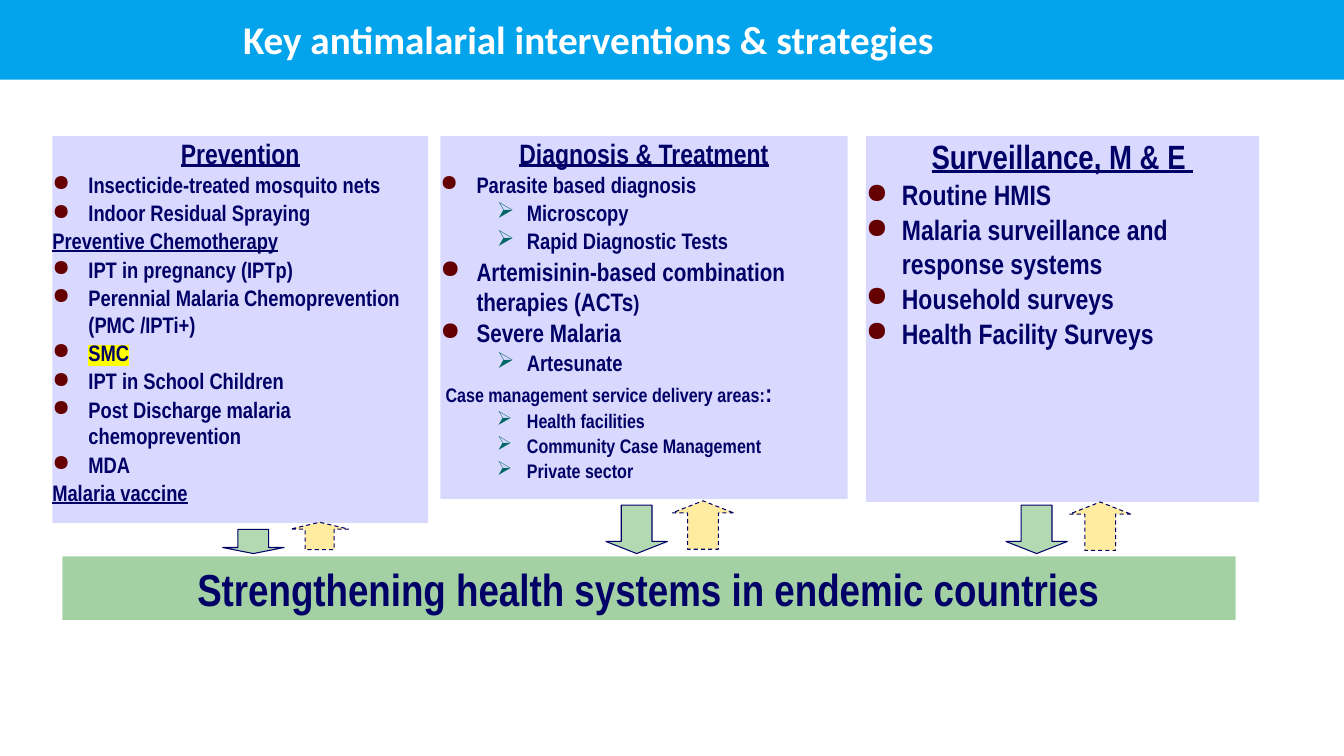
from pptx import Presentation
from pptx.dml.color import RGBColor
from pptx.enum.dml import MSO_LINE_DASH_STYLE as DASH
from pptx.enum.shapes import MSO_SHAPE as SHAPE
from pptx.enum.text import MSO_ANCHOR as ANCHOR, PP_ALIGN as ALIGN
from pptx.oxml.ns import qn
from pptx.util import Cm, Pt
from lxml.etree import SubElement, Element

NAVY = RGBColor(0x00, 0x00, 0x66)
WHITE = RGBColor(0xFF, 0xFF, 0xFF)
SKY = RGBColor(0x04, 0xA4, 0xEC)
LILAC = RGBColor(0x99, 0x99, 0xFF)
GREEN = RGBColor(0x33, 0x99, 0x33)
AMBER = RGBColor(0xFF, 0xCC, 0x00)
MAROON = RGBColor(0x64, 0x00, 0x00)
TEAL = RGBColor(0x00, 0x66, 0x66)
YELLOW = RGBColor(0xFF, 0xFF, 0x00)

# Paragraph kinds
HEAD, ITEM, SUB, SUBHEAD, NOTE, MARKED = range(6)
# kind: (level, left margin in cm, hanging indent in cm, bullet, bullet colour)
BULLETS = {
    ITEM: (0, 0.91, 0.91, "●", MAROON),
    MARKED: (0, 0.91, 0.91, "●", MAROON),
    SUB: (1, 2.18, 0.76, "➢", TEAL),
}

# Each paragraph: kind, then (text, size) runs
PREVENTION = [
    (HEAD, ("Prevention", 20)),
    (ITEM, ("Insecticide-treated mosquito nets", 16)),
    (ITEM, ("Indoor Residual Spraying", 16)),
    (SUBHEAD, ("Preventive Chemotherapy", 16)),
    (ITEM, ("IPT in pregnancy (IPTp)", 16)),
    (ITEM, ("Perennial Malaria Chemoprevention (PMC /IPTi+)", 16)),
    (MARKED, ("SMC", 16)),
    (ITEM, ("IPT in School Children", 16)),
    (ITEM, ("Post Discharge malaria chemoprevention", 16)),
    (ITEM, ("MDA", 16)),
    (SUBHEAD, ("Malaria vaccine", 16)),
]
DIAGNOSIS = [
    (HEAD, ("Diagnosis & Treatment", 20)),
    (ITEM, ("Parasite based diagnosis", 16)),
    (SUB, ("Microscopy", 16)),
    (SUB, ("Rapid Diagnostic Tests", 16)),
    (ITEM, ("Artemisinin-based combination therapies (ACTs", 18), (")", 16)),
    (ITEM, ("Severe Malaria", 18)),
    (SUB, ("Artesunate", 16)),
    (NOTE, (" ", 16), ("Case management service delivery areas:", 14), (":", 18)),
    (SUB, ("Health facilities", 14)),
    (SUB, ("Community Case Management", 14)),
    (SUB, ("Private sector", 14)),
]
SURVEILLANCE = [
    (HEAD, ("Surveillance, M & E ", 24)),
    (ITEM, ("Routine HMIS", 20)),
    (ITEM, ("Malaria surveillance and response systems", 20)),
    (ITEM, ("Household surveys", 20)),
    (ITEM, ("Health Facility Surveys", 20)),
]


class SlideBuilder:
    title_font = "Calibri"
    body_font = "Arial Narrow"

    def __init__(self, slide):
        self.s = slide

    def shape(self, kind, box, color, alpha=100):
        sp = self.s.shapes.add_shape(kind, *map(Cm, box))
        sp.shadow.inherit = False
        sp.fill.solid()
        sp.fill.fore_color.rgb = color
        sp.line.fill.background()
        if alpha < 100:
            clr = sp.element.spPr.find(qn("a:solidFill"))[0]
            SubElement(clr, qn("a:alpha"), val=str(alpha * 1000))
        return sp

    def run(self, p, text, size, color=NAVY, font=None, underline=False):
        r = p.add_run()
        r.text = text
        f = r.font
        f.name, f.size, f.bold = font or self.body_font, Pt(size), True
        f.underline = underline
        f.color.rgb = color
        return r

    def bullet(self, p, level, margin, hanging, char, color):
        p.level = level
        pPr = p._p.get_or_add_pPr()
        pPr.set("marL", str(Cm(margin)))
        pPr.set("indent", str(-Cm(hanging)))
        SubElement(SubElement(pPr, qn("a:buClr")), qn("a:srgbClr"), val=str(color))
        SubElement(pPr, qn("a:buChar"), char=char)

    def highlight(self, r, color):
        mark = Element(qn("a:highlight"))
        SubElement(mark, qn("a:srgbClr"), val=str(color))
        r._r.rPr.find(qn("a:solidFill")).addnext(mark)

    def title(self, text, box):
        sp = self.s.shapes.title
        sp.left, sp.top, sp.width, sp.height = map(Cm, box)
        tf = sp.text_frame
        tf.vertical_anchor = ANCHOR.TOP
        tf.word_wrap = True
        p = tf.paragraphs[0]
        p.alignment = ALIGN.LEFT
        self.run(p, text, 28, WHITE, self.title_font)

    def banner(self, box):
        sp = self.shape(SHAPE.RECTANGLE, box, SKY)
        self.s.shapes.title.element.addprevious(sp.element)

    def panel(self, box, paragraphs):
        tf = self.shape(SHAPE.RECTANGLE, box, LILAC, 37).text_frame
        tf.margin_left = tf.margin_right = tf.margin_top = tf.margin_bottom = 0
        tf.vertical_anchor = ANCHOR.TOP
        tf.word_wrap = True
        for i, (kind, *runs) in enumerate(paragraphs):
            p = tf.add_paragraph() if i else tf.paragraphs[0]
            p.alignment = ALIGN.CENTER if kind == HEAD else ALIGN.LEFT
            if kind in BULLETS:
                self.bullet(p, *BULLETS[kind])
            if i:
                p.space_before = Pt(1)
            for text, size in runs:
                r = self.run(p, text, size, underline=kind in (HEAD, SUBHEAD))
                if kind == MARKED:
                    self.highlight(r, YELLOW)

    def foundation(self, box, text):
        tf = self.shape(SHAPE.RECTANGLE, box, GREEN, 45).text_frame
        tf.vertical_anchor = ANCHOR.TOP
        tf.word_wrap = True
        p = tf.paragraphs[0]
        p.alignment = ALIGN.CENTER
        self.run(p, text, 32)

    def arrow(self, box, up=False):
        sp = self.shape(SHAPE.DOWN_ARROW, box, AMBER if up else GREEN, 37)
        sp.adjustments[0], sp.adjustments[1] = 0.5, 0.25
        sp.line.color.rgb = NAVY
        sp.line.width = Pt(0.75)
        if up:
            sp.rotation = 180
            sp.line.dash_style = DASH.DASH


def main():
    prs = Presentation()
    prs.slide_width, prs.slide_height = Cm(33.87), Cm(19.05)
    b = SlideBuilder(prs.slides.add_slide(prs.slide_layouts[5]))

    # Title on its banner
    b.banner((0, 0, 33.87, 2.01))
    b.title("Key antimalarial interventions & strategies", (5.87, 0.25, 21.97, 0.94))

    # Three columns of interventions
    for left, width, height, paragraphs in (
        (1.32, 9.47, 9.75, PREVENTION),
        (11.1, 10.26, 9.14, DIAGNOSIS),
        (21.82, 9.91, 9.22, SURVEILLANCE),
    ):
        b.panel((left, 3.43, width, height), paragraphs)

    # Health systems bar
    b.foundation((1.57, 14.02, 29.57, 1.6),
                 "Strengthening health systems in endemic countries")

    # Arrow pairs between columns and bar
    for down, up in (
        ((5.61, 13.34, 1.55, 0.61), (7.32, 13.16, 1.47, 0.69)),
        ((15.27, 12.73, 1.55, 1.22), (16.94, 12.62, 1.55, 1.22)),
        ((25.35, 12.73, 1.55, 1.22), (26.95, 12.65, 1.55, 1.22)),
    ):
        b.arrow(down)
        b.arrow(up, up=True)

    prs.save("out.pptx")


if __name__ == "__main__":
    main()
